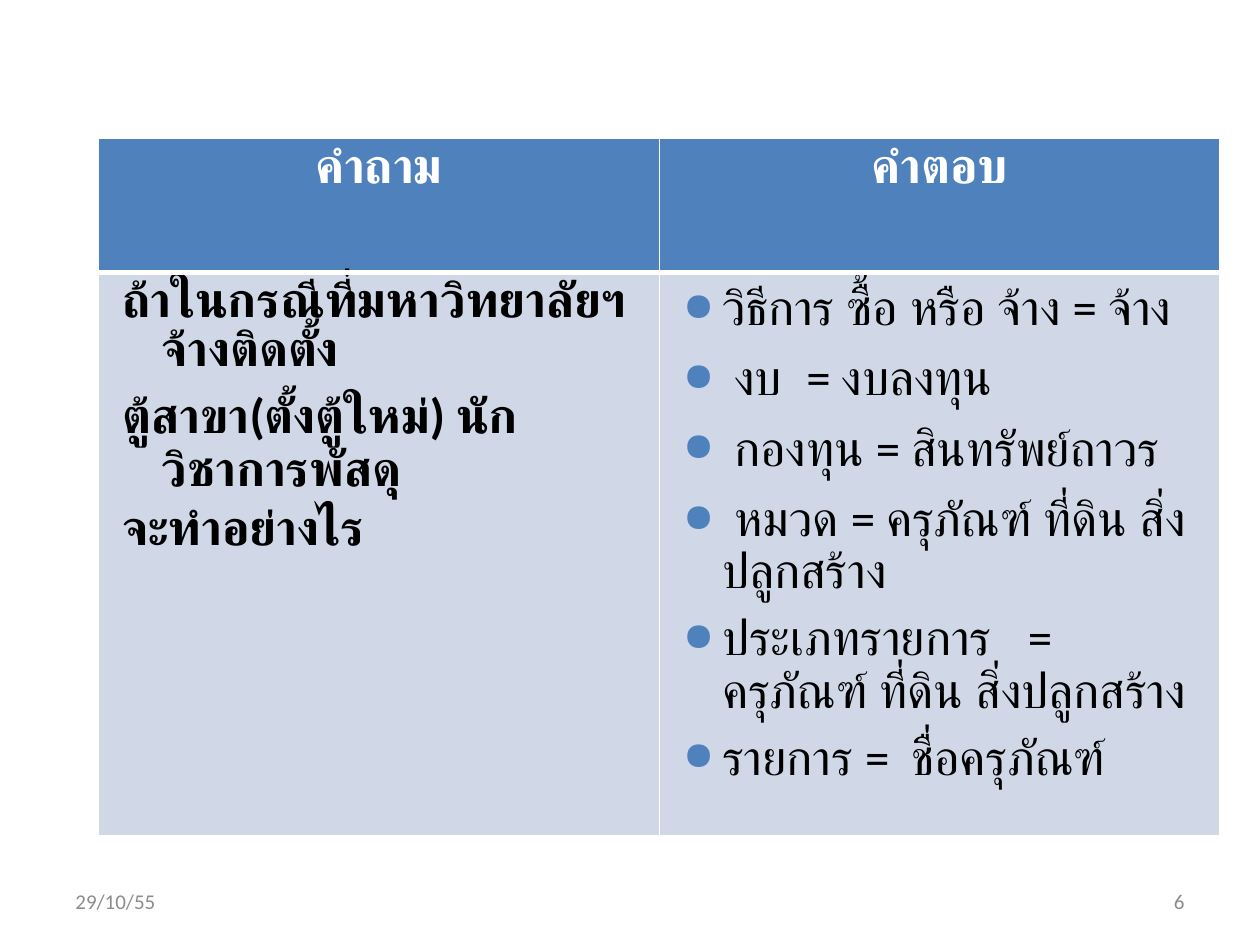
from lxml import etree
from pptx import Presentation
from pptx.dml.color import RGBColor
from pptx.enum.text import MSO_ANCHOR, PP_ALIGN
from pptx.oxml.ns import qn
from pptx.util import Pt

LEFT, MID, RIGHT = PP_ALIGN.LEFT, PP_ALIGN.CENTER, PP_ALIGN.RIGHT
CENTER = MSO_ANCHOR.MIDDLE
WHITE = RGBColor(0xFF, 0xFF, 0xFF)
BLACK = RGBColor(0, 0, 0)
BLUE = RGBColor(0x4F, 0x81, 0xBD)
PALE = RGBColor(0xD0, 0xD8, 0xE8)
GRAY = RGBColor(0x8C, 0x8C, 0x8C)
FONT = "Calibri"

HEADS = ["คำถาม", "คำตอบ"]
ASKED = [
    "ถ้าในกรณีที่มหาวิทยาลัยฯ จ้างติดตั้ง",
    "ตู้สาขา(ตั้งตู้ใหม่) นักวิชาการพัสดุ",
    "จะทำอย่างไร",
]
REPLIES = [
    "วิธีการ ซื้อ หรือ จ้าง = จ้าง",
    " งบ  = งบลงทุน",
    " กองทุน = สินทรัพย์ถาวร",
    " หมวด = ครุภัณฑ์ ที่ดิน สิ่งปลูกสร้าง",
    "ประเภทรายการ   =  ครุภัณฑ์ ที่ดิน สิ่งปลูกสร้าง",
    "รายการ =  ชื่อครุภัณฑ์",
]


def add_run(para, text, size, color, bold=False):
    run = para.add_run()
    run.text = text
    font = run.font
    font.name, font.size, font.bold = FONT, Pt(size), bold
    font.color.rgb = color


def add_node(parent, tag, **attrs):
    return etree.SubElement(parent, qn(tag), attrs)


def hang(para, bullet):
    """Give a paragraph its hanging indent and, if asked, a round bullet."""
    para.space_before = Pt(6)
    props = para._p.get_or_add_pPr()
    props.set("marL", str(Pt(28.8)))
    props.set("indent", str(Pt(-22.3)))
    if bullet:
        color = add_node(props, "a:buClr")
        add_node(color, "a:srgbClr", val=str(BLUE))
        add_node(props, "a:buSzPct", val="80000")
        add_node(props, "a:buChar", char="●")
    else:
        add_node(props, "a:buNone")


def style_cell(cell, fill, top, bottom):
    """Draw white borders, then fill the cell."""
    props = cell._tc.get_or_add_tcPr()
    sides = {"a:lnL": 1, "a:lnR": 1, "a:lnT": top, "a:lnB": bottom}
    for tag, width in sides.items():
        line = add_node(props, tag, w=str(Pt(width)))
        paint = add_node(line, "a:solidFill")
        add_node(paint, "a:srgbClr", val=str(WHITE))
    cell.fill.solid()
    cell.fill.fore_color.rgb = fill


def fill_list(cell, lines, bold, bullet):
    frame = cell.text_frame
    for i, text in enumerate(lines):
        para = frame.add_paragraph() if i else frame.paragraphs[0]
        hang(para, bullet)
        add_run(para, text, 28, BLACK, bold)


def add_grid(slide, left, top, width, height):
    head = 77
    grid = slide.shapes.add_table(
        2, 2, Pt(left), Pt(top), Pt(width), Pt(height)).table
    grid.rows[0].height = Pt(head)
    grid.rows[1].height = Pt(height - head)

    # Header row
    for col, text in enumerate(HEADS):
        cell = grid.cell(0, col)
        style_cell(cell, BLUE, 1, 3)
        para = cell.text_frame.paragraphs[0]
        para.alignment = MID
        add_run(para, text, 28, WHITE, True)

    # Question and answer
    for col, lines in enumerate([ASKED, REPLIES]):
        cell = grid.cell(1, col)
        style_cell(cell, PALE, 3, 1)
        fill_list(cell, lines, bold=col == 0, bullet=col == 1)


def add_footer(slide, left, top, width, height):
    part = 168
    notes = [(left, "29/10/55", LEFT), (left + width - part, "6", RIGHT)]
    for x, text, align in notes:
        box = slide.shapes.add_textbox(Pt(x), Pt(top), Pt(part), Pt(height))
        frame = box.text_frame
        frame.word_wrap = True
        frame.vertical_anchor = CENTER
        para = frame.paragraphs[0]
        para.alignment = align
        add_run(para, text, 12, GRAY)


def main():
    deck = Presentation()
    deck.slide_width, deck.slide_height = Pt(720), Pt(540)
    slide = deck.slides.add_slide(deck.slide_layouts[6])
    add_footer(slide, 36, 500.5, 648, 28.75)
    add_grid(slide, 56.25, 78.75, 641, 399)
    deck.save("out.pptx")


if __name__ == "__main__":
    main()
